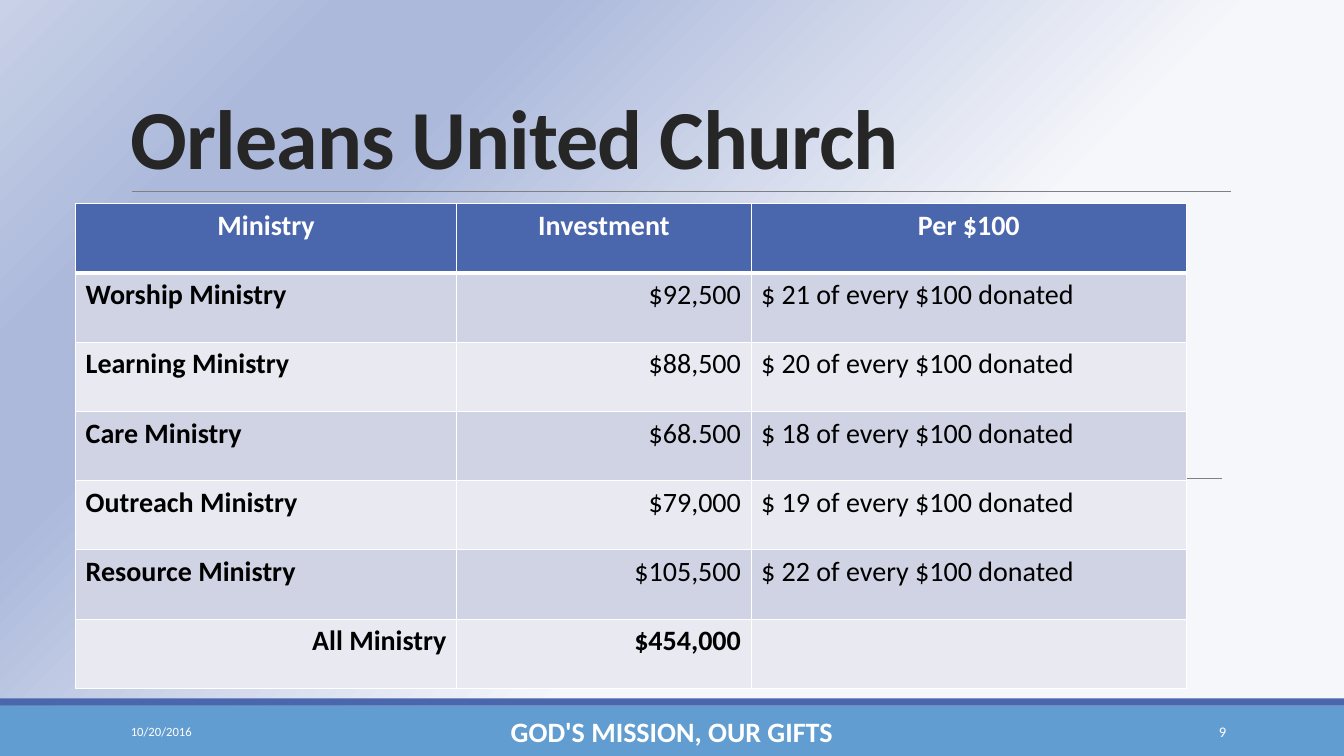
from lxml import etree
from pptx import Presentation
from pptx.dml.color import RGBColor
from pptx.enum import shapes, text
from pptx.oxml import parse_xml
from pptx.oxml.ns import nsdecls, qn
from pptx.util import Inches, Pt

WHITE = RGBColor(0xFF, 0xFF, 0xFF)
BLACK = RGBColor(0, 0, 0)
INK = RGBColor(0x26, 0x26, 0x26)
GREY = RGBColor(0x80, 0x80, 0x80)
NAVY = RGBColor(0x4A, 0x66, 0xAC)
SKY = RGBColor(0x62, 0x9D, 0xD1)
BANDS = [RGBColor(0xE9, 0xEA, 0xF1), RGBColor(0xD0, 0xD3, 0xE3)]
STOPS = [(40, RGBColor(0xF6, 0xF7, 0xFB)), (74, RGBColor(0xAC, 0xB9, 0xDB)),
         (83, RGBColor(0xAC, 0xB9, 0xDB)), (100, RGBColor(0xC8, 0xD1, 0xE7))]

LEFT, CENTER, RIGHT = text.PP_ALIGN.LEFT, text.PP_ALIGN.CENTER, text.PP_ALIGN.RIGHT
COLUMNS = [3.78, 2.92, 4.32]
HEADER = ["Ministry", "Investment", "Per $100"]
MINISTRIES = [
    ("Worship Ministry", "$92,500", 21),
    ("Learning Ministry", "$88,500", 20),
    ("Care Ministry", "$68.500", 18),
    ("Outreach Ministry", "$79,000", 19),
    ("Resource Ministry", "$105,500", 22),
]
TOTAL = ["All Ministry", "$454,000", ""]


def paint_background(s):
    """Fill the background with a gradient centred on the bottom right corner."""
    s.background.fill.gradient()
    grad = s.element.find(".//" + qn("a:gradFill"))
    stops = "".join(f'<a:gs pos="{pos * 1000}"><a:srgbClr val="{color}"/></a:gs>'
                    for pos, color in STOPS)
    grad.getparent().replace(grad, parse_xml(
        f'<a:gradFill rotWithShape="1" {nsdecls("a")}><a:gsLst>{stops}</a:gsLst>'
        '<a:path path="circle"><a:fillToRect l="100000" t="100000"/></a:path></a:gradFill>'))


def add_rule(s, x, y, w):
    """Draw a thin grey horizontal line."""
    line = s.shapes.add_connector(shapes.MSO_CONNECTOR.STRAIGHT,
                                  Inches(x), Inches(y), Inches(x + w), Inches(y))
    line.line.color.rgb = GREY
    line.line.width = Pt(0.5)
    etree.SubElement(line.element.spPr, qn("a:effectLst"))


def add_bar(s, x, y, w, h, color):
    """Draw a plain filled bar."""
    sp = s.shapes.add_shape(shapes.MSO_SHAPE.RECTANGLE,
                            Inches(x), Inches(y), Inches(w), Inches(h))
    sp.shadow.inherit = False
    sp.fill.solid()
    sp.fill.fore_color.rgb = color
    sp.line.fill.background()


def write(tf, words, size, color, bold, align, spacing=None):
    """Write one run into the first paragraph and return it."""
    p = tf.paragraphs[0]
    p.alignment = align
    p.line_spacing = spacing
    r = p.add_run()
    r.text = words
    r.font.name = "Calibri"
    r.font.size = Pt(size)
    r.font.bold = bold
    r.font.color.rgb = color
    return r


def add_text(s, x, y, w, h, words, size, color=WHITE, bold=False, align=LEFT,
             anchor=text.MSO_ANCHOR.MIDDLE, spacing=None):
    """Place a wrapped text box and return its run."""
    tf = s.shapes.add_textbox(Inches(x), Inches(y), Inches(w), Inches(h)).text_frame
    tf.word_wrap = True
    tf.vertical_anchor = anchor
    return write(tf, words, size, color, bold, align, spacing)


def add_title(s, x, y, w, h):
    """Place the slide title with the rule under it."""
    add_rule(s, x + 0.11, y + h, w - 0.1)
    r = add_text(s, x, y, w, h, "Orleans United Church", 60, INK, True,
                 anchor=text.MSO_ANCHOR.BOTTOM, spacing=0.85)
    r.font._element.set("spc", "-70")


def style_cell(cell, fill, top, bottom):
    """Set margins, white borders and fill of a table cell."""
    cell.margin_left = cell.margin_right = Inches(0.1)
    cell.margin_top = cell.margin_bottom = 0
    cell.fill.solid()
    cell.fill.fore_color.rgb = fill
    tcPr = cell._tc.get_or_add_tcPr()
    for i, (side, width) in enumerate(zip("LRTB", (1, 1, top, bottom))):
        tcPr.insert(i, parse_xml(
            f'<a:ln{side} w="{Pt(width)}" {nsdecls("a")}><a:solidFill>'
            f'<a:srgbClr val="{WHITE}"/></a:solidFill></a:ln{side}>'))


def add_ministry_table(s, x, y, w, h):
    """Build the table of ministries with its header and total rows."""
    rows = [HEADER]
    rows += [(name, sum_, f"$ {share} of every $100 donated")
             for name, sum_, share in MINISTRIES]
    rows.append(TOTAL)
    table = s.shapes.add_table(len(rows), len(COLUMNS), Inches(x), Inches(y),
                               Inches(w), Inches(h)).table
    for column, width in zip(table.columns, COLUMNS):
        column.width = Inches(width)
    for i, row in enumerate(rows):
        table.rows[i].height = Inches(h / len(rows))
        header, total = i == 0, row is TOTAL
        for j, words in enumerate(row):
            cell = table.cell(i, j)
            style_cell(cell, NAVY if header else BANDS[i % 2],
                       3 if i == 1 else 1, 3 if header else 1)
            align = CENTER if header else RIGHT if total or j == 1 else LEFT
            if words:
                write(cell.text_frame, words, 20, WHITE if header else BLACK,
                      header or total or j == 0, align, 1.15)


def add_footer_bars(s, x, y, w, h):
    """Draw the two-tone band at the foot of the slide."""
    add_bar(s, x, y + 0.07, w, h - 0.07, SKY)
    add_bar(s, x, y, w, 0.07, NAVY)


def add_footer_text(s, x, y, w, h):
    """Place the date, the motto and the slide number in the footer."""
    add_text(s, x, y, 2.7, h, "10/20/2016", 9)
    add_text(s, x + 2.83, y, 5.27, h, "GOD'S MISSION, OUR GIFTS", 20, bold=True, align=CENTER)
    add_text(s, x + w - 1.43, y, 1.43, h, "9", 10.5, align=RIGHT)


def main():
    """Build the slide and save it."""
    prs = Presentation()
    prs.slide_width, prs.slide_height = Inches(13.33), Inches(7.5)
    s = prs.slides.add_slide(prs.slide_layouts[6])
    paint_background(s)
    add_footer_bars(s, 0, 6.93, 13.33, 0.57)
    add_rule(s, 1.32, 4.75, 10.8)
    add_ministry_table(s, 0.75, 2.02, sum(COLUMNS), 4.81)
    add_footer_text(s, 1.2, 7.06, 11.06, 0.4)
    add_title(s, 1.2, 0.31, 11, 1.59)
    prs.save("out.pptx")


if __name__ == "__main__":
    main()
